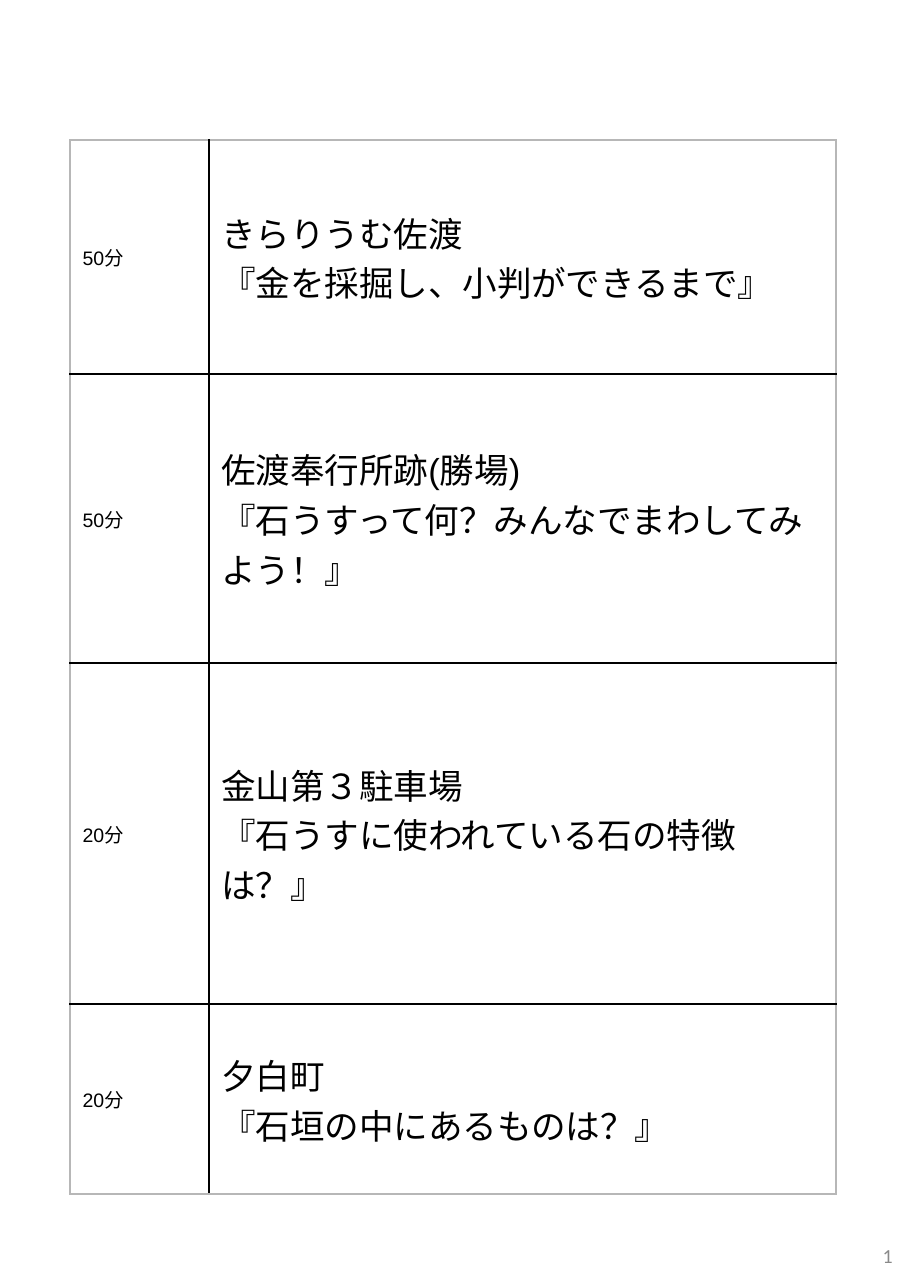
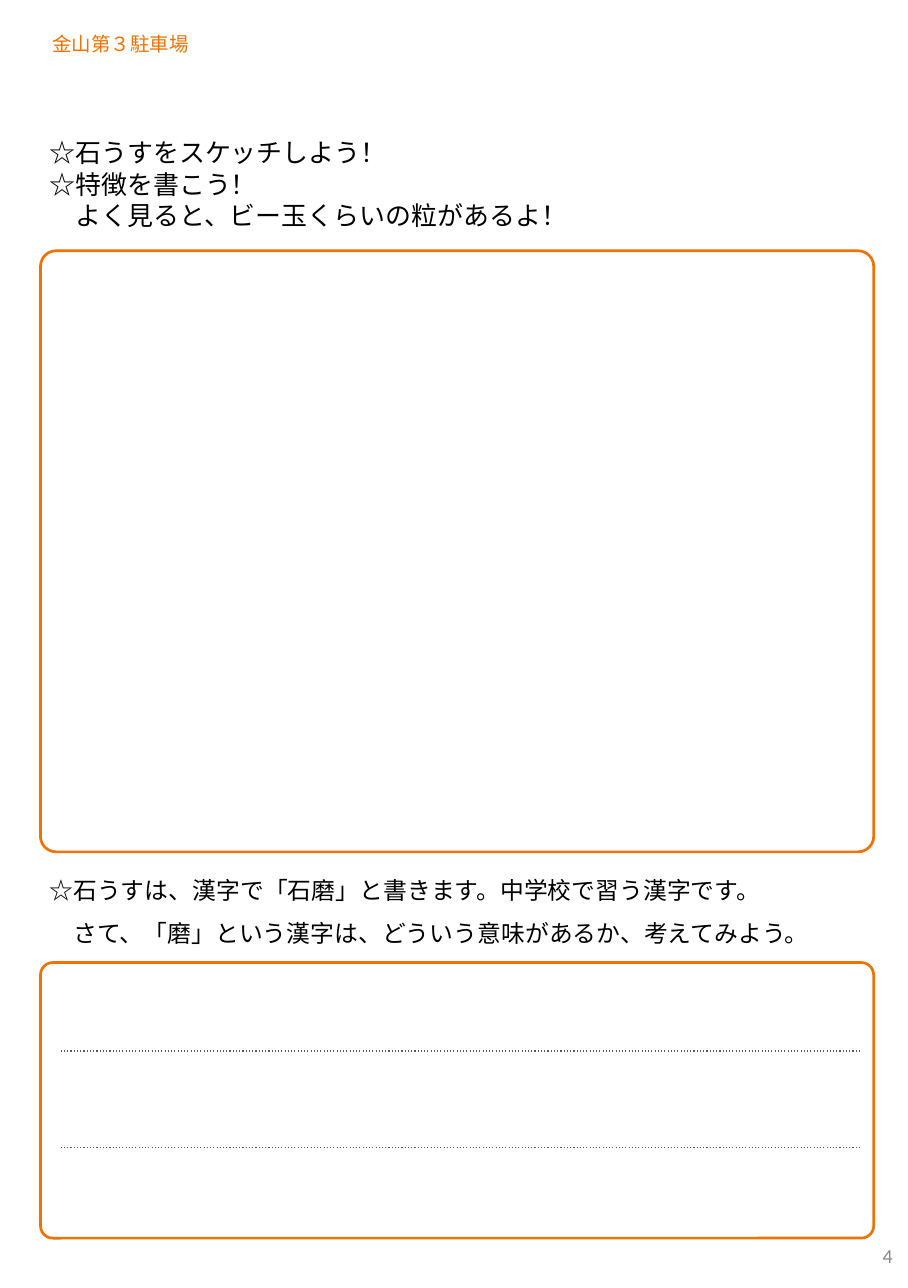
from pptx import Presentation
from pptx.dml.color import RGBColor as Rgb
from pptx.enum.shapes import MSO_SHAPE as Kind
from pptx.enum.text import MSO_ANCHOR as Anchor, PP_ALIGN as Align
from pptx.oxml.ns import qn
from pptx.util import Inches as In, Pt
from lxml.etree import SubElement as Sub

WIDE, HIGH = In(5.83), In(8.27)
INK, GREY, EDGE, RULE = "000000", "898989", "B7B7B7", "595959"
ORANGE, WHITE = "EE7304", "FFFFFF"
ASIAN = "Noto Sans CJK JP"
LEFT, SPAN = 4.46, 91.77

STOPS = [
    (18.14, "50分", ["きらりうむ佐渡", "『金を採掘し、小判ができるまで』"]),
    (22.49, "50分", ["佐渡奉行所跡(勝場)",
                    "『石うすって何？みんなでまわしてみよう！』"]),
    (26.48, "20分", ["金山第３駐車場", "『石うすに使われている石の特徴は？』"]),
    (14.75, "20分", ["夕白町", "『石垣の中にあるものは？』"]),
]
SKETCH = ["☆石うすをスケッチしよう！", "☆特徴を書こう！",
          "　よく見ると、ビー玉くらいの粒があるよ！"]
KANJI = ["☆石うすは、漢字で「石磨」と書きます。中学校で習う漢字です。",
         "　さて、「磨」という漢字は、どういう意味があるか、考えてみよう。"]


def tint(code):
    """Turn a hex string into a colour."""
    return Rgb.from_string(code)


def across(share):
    """Turn a percentage of the slide width into a length."""
    return int(WIDE * share / 100)


def down(share):
    """Turn a percentage of the slide height into a length."""
    return int(HIGH * share / 100)


def area(x, y, w, h):
    """Turn four percentages into left, top, width and height."""
    return across(x), down(y), across(w), down(h)


def write(frame, lines, size, color=INK, face=ASIAN, align=Align.LEFT,
          pitch=None):
    """Fill a text frame with one paragraph per line."""
    frame.word_wrap = True
    for i, line in enumerate(lines):
        para = frame.add_paragraph() if i else frame.paragraphs[0]
        para.alignment = align
        if pitch:
            para.line_spacing = Pt(pitch)
        run = para.add_run()
        run.text = line
        font = run.font
        font.size, font.name = Pt(size), face
        font.color.rgb = tint(color)
        Sub(font._element, qn("a:ea")).set("typeface", ASIAN)


def note(slide, box, lines, size, **look):
    """Add a text box."""
    frame = slide.shapes.add_textbox(*area(*box)).text_frame
    write(frame, lines, size, **look)
    return frame


def panel(slide, box, curve=None, fill=None, line=None):
    """Add a rounded rectangle."""
    shape = slide.shapes.add_shape(Kind.ROUNDED_RECTANGLE, *area(*box))
    shape.shadow.inherit = False
    if curve:
        shape.adjustments[0] = curve
    if fill:
        shape.fill.solid()
        shape.fill.fore_color.rgb = tint(fill)
    else:
        shape.fill.background()
    if line:
        shape.line.color.rgb = tint(line)
        shape.line.width = Pt(1.25)
    else:
        shape.line.fill.background()
    return shape


def border(cell, sides, width, dash="solid"):
    """Draw cell borders; a side without a colour stays empty."""
    props = cell._tc.get_or_add_tcPr()
    for side in "LRTB":
        color = sides.get(side)
        edge = Sub(props, qn("a:ln" + side), w=str(Pt(width)))
        if color:
            fill = Sub(edge, qn("a:solidFill"))
            Sub(fill, qn("a:srgbClr"), val=color)
            Sub(edge, qn("a:prstDash"), val=dash)
        else:
            Sub(edge, qn("a:noFill"))
    cell.fill.background()


def grid(slide, x, y, cols, rows):
    """Add a plain table from column and row shares."""
    box = area(x, y, sum(cols), sum(rows))
    table = slide.shapes.add_table(len(rows), len(cols), *box).table
    table.first_row = table.horz_banding = False
    for col, share in zip(table.columns, cols):
        col.width = across(share)
    for row, share in zip(table.rows, rows):
        row.height = down(share)
    return table


def page(deck, number):
    """Add a blank slide with its page number."""
    slide = deck.slides.add_slide(deck.slide_layouts[6])
    frame = note(slide, (76.67, 96.01, 23.33, 2.9), [number], 9.2,
                 color=GREY, face="Calibri", align=Align.RIGHT)
    frame.vertical_anchor = Anchor.MIDDLE
    return slide


def plan(slide):
    """Add the table of stops and their times."""
    table = grid(slide, 7.72, 10.88, [15.27, 69.13], [s[0] for s in STOPS])
    last = len(STOPS) - 1
    for i, (_, time, lines) in enumerate(STOPS):
        for j, (text, size) in enumerate((([time], 9), (lines, 16))):
            cell = table.cell(i, j)
            cell.vertical_anchor = Anchor.MIDDLE
            cell.margin_left = cell.margin_right = In(0.08)
            cell.margin_top = cell.margin_bottom = In(0.04)
            write(cell.text_frame, text, size, face="Arial")
            border(cell, {"L": INK if j else EDGE, "R": EDGE if j else INK,
                          "T": INK if i else EDGE,
                          "B": INK if i < last else EDGE}, 1)


def ruled(slide, count):
    """Add writing rows parted by dotted rules."""
    table = grid(slide, 6.69, 74.12, [87.99], [7.5] * count)
    for i in range(count):
        border(table.cell(i, 0), {"T": RULE if i else None,
                                  "B": RULE if i < count - 1 else None},
               0.75, "sysDot")


def sheet(slide):
    """Add the work sheet for sketching and answering."""
    note(slide, (3.77, 10.04, 92.45, 8.59), SKETCH, 12, pitch=14.4)
    panel(slide, (LEFT, 19.47, SPAN, 46.67), 0.026, line=ORANGE)
    note(slide, (3.77, 66.26, 92.45, 7.62), KANJI, 11, pitch=19.9)
    panel(slide, (LEFT, 74.73, SPAN, 21.4), 0.045, line=ORANGE)
    ruled(slide, 3)
    label = panel(slide, (1.89, 1.45, 22.81, 3.87), fill=WHITE).text_frame
    label.vertical_anchor = Anchor.MIDDLE
    write(label, ["金山第３駐車場"], 9, color=ORANGE, align=Align.CENTER)


def main():
    """Build and save the two slides."""
    deck = Presentation()
    deck.slide_width, deck.slide_height = WIDE, HIGH
    plan(page(deck, "1"))
    sheet(page(deck, "4"))
    deck.save("out.pptx")


if __name__ == "__main__":
    main()
